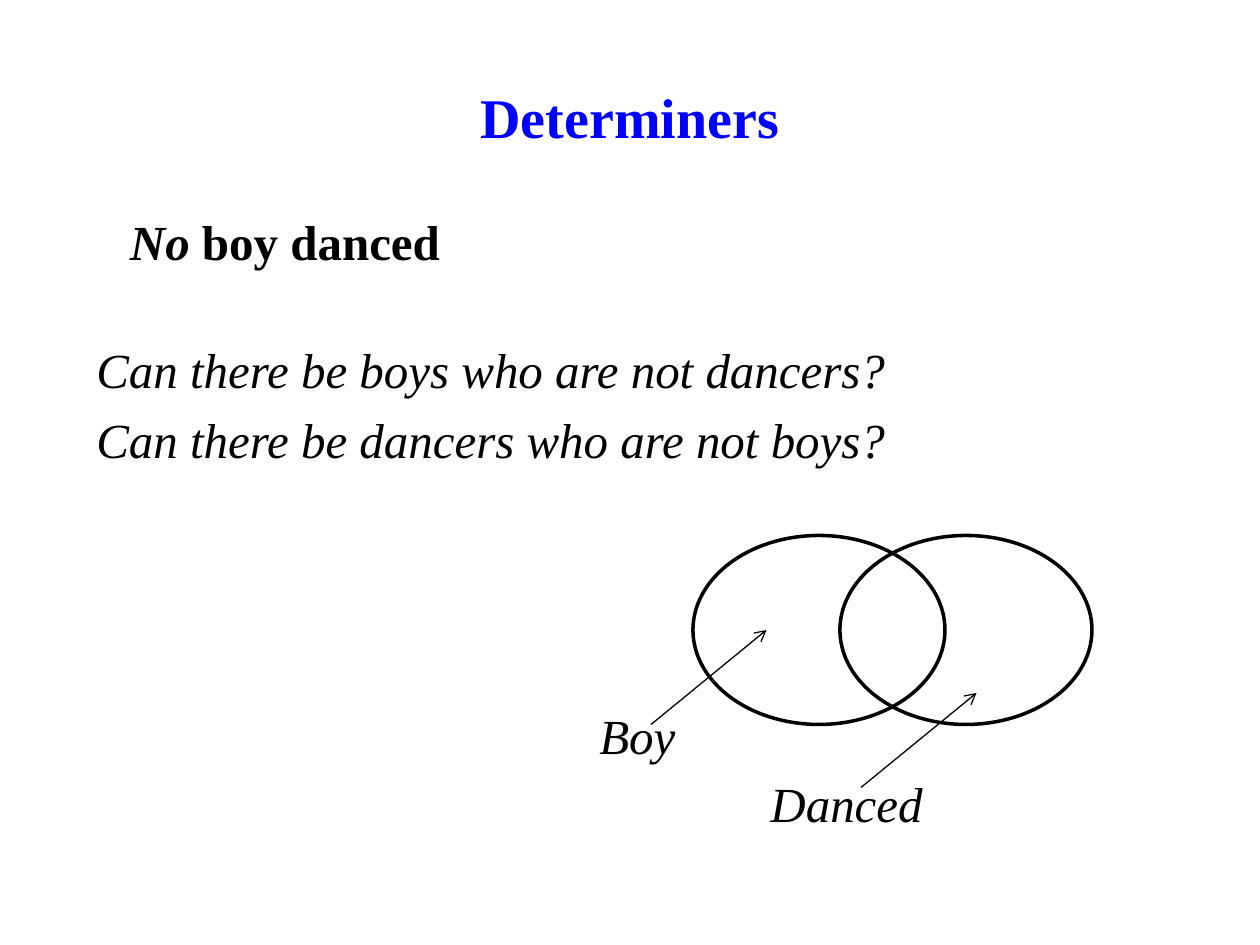
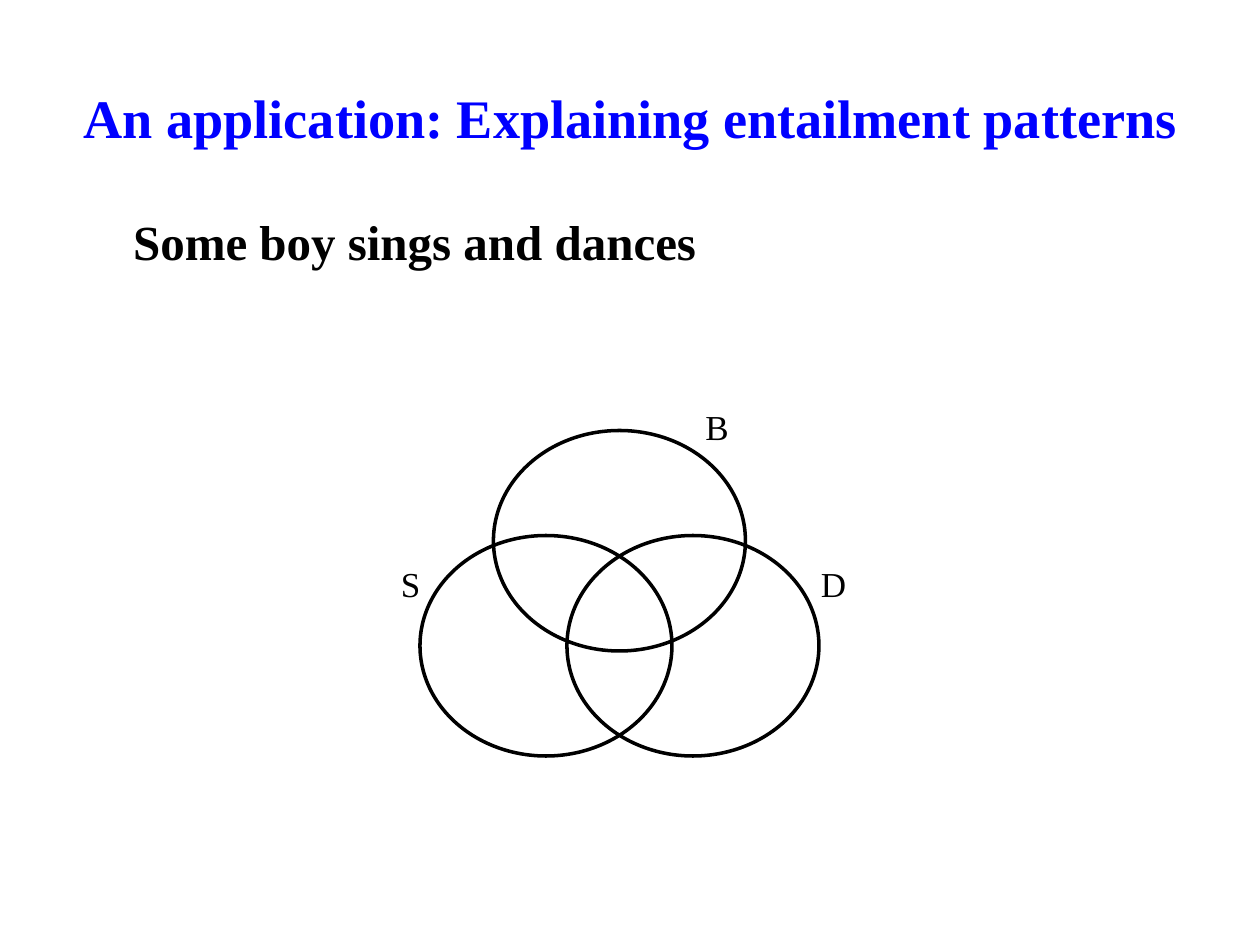
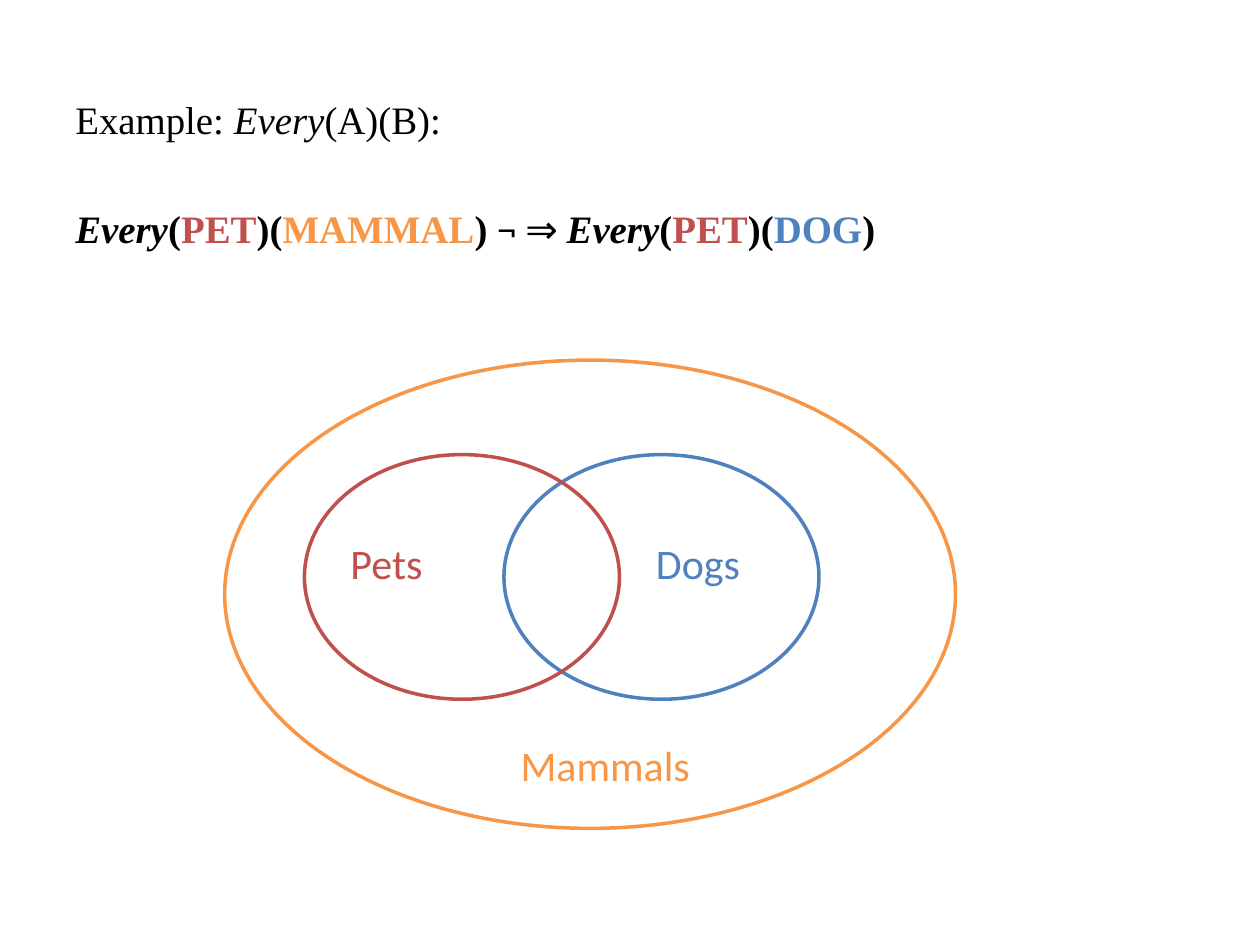
from lxml import etree
from pptx import Presentation
from pptx.dml.color import RGBColor
from pptx.enum import shapes, text
from pptx.oxml import ns
from pptx import util as u

BLACK, BLUE = "000000", "0000FF"
PET, MAMMAL, DOG = "C0504D", "F79646", "4F81BD"
SERIF, SANS = "Times New Roman", "Calibri"


def colour(value):
    return RGBColor.from_string(value)


def write(para, words, size=28, font=SERIF, ink=BLACK, bold=False, italic=False):
    span = para.add_run()
    span.text = words
    span.font.size = u.Pt(size)
    span.font.name = font
    span.font.color.rgb = colour(ink)
    span.font.bold = bold
    span.font.italic = italic


deck = Presentation()
deck.slide_width, deck.slide_height = u.Inches(10), u.Inches(7.5)
column, row = deck.slide_width / 120, deck.slide_height / 90
title_only, blank = deck.slide_layouts[5], deck.slide_layouts[6]

determiners = deck.slides.add_slide(title_only)
entailment = deck.slides.add_slide(title_only)
every = deck.slides.add_slide(blank)

titles = [
    (determiners, "Determiners", 32),
    (entailment, "An application: Explaining entailment patterns", 31),
]
for page, words, size in titles:
    title = page.shapes.title
    title.left, title.top = int(6 * column), int(3.6 * row)
    title.width, title.height = int(108 * column), int(15 * row)
    frame = title.text_frame
    frame.auto_size = text.MSO_AUTO_SIZE.NONE
    frame.vertical_anchor = text.MSO_ANCHOR.MIDDLE
    frame.paragraphs[0].alignment = text.PP_ALIGN.CENTER
    write(frame.paragraphs[0], words, size=size, ink=BLUE, bold=True)

ovals = [
    (determiners, 66, 51, 24, 18, BLACK),
    (determiners, 80, 51, 24, 18, BLACK),
    (entailment, 40, 51, 24, 21, BLACK),
    (entailment, 54, 51, 24, 21, BLACK),
    (entailment, 47, 41, 24, 21, BLACK),
    (every, 48, 43.3, 30, 23.3, DOG),
    (every, 21.4, 34.3, 69.6, 44.6, MAMMAL),
    (every, 29, 43.3, 30, 23.3, PET),
]
for page, left, top, width, height, ink in ovals:
    oval = page.shapes.add_shape(
        shapes.MSO_SHAPE.OVAL,
        int(left * column), int(top * row), int(width * column), int(height * row))
    oval.shadow.inherit = False
    oval.fill.background()
    oval.line.color.rgb = colour(ink)
    oval.line.width = u.Pt(2)

arrows = [(62, 69, 73, 60), (82, 75, 93, 66)]
for start_x, start_y, end_x, end_y in arrows:
    arrow = determiners.shapes.add_connector(
        shapes.MSO_CONNECTOR.STRAIGHT,
        int(start_x * column), int(start_y * row), int(end_x * column), int(end_y * row))
    arrow.line.color.rgb = colour(BLACK)
    arrow.line.width = u.Pt(0.75)
    etree.SubElement(arrow.line._get_or_add_ln(), ns.qn("a:tailEnd"), type="arrow")
    etree.SubElement(arrow._element.spPr, ns.qn("a:effectLst"))

strong, slanted = {"bold": True}, {"italic": True}
letter = {"size": 20}
plain = {"size": 22.2}
formula = plain | strong
quantifier = formula | slanted
name = {"size": 24, "font": SANS}

texts = [
    (determiners, 11.2, 19.6, 90, 6, 0, [
        [("No ", strong | slanted), ("boy danced", strong)]]),
    (determiners, 8, 31.7, 105, 13, 6.4, [
        [("Can there be boys who are not dancers?", slanted)],
        [("Can there be dancers who are not boys?", slanted)]]),
    (determiners, 55.9, 66.6, 12, 6, 0, [[("Boy", slanted)]]),
    (determiners, 72.2, 73.1, 20, 6, 0, [[("Danced", slanted)]]),
    (entailment, 11.5, 19.6, 90, 6, 0, [[("Some boy sings and dances", strong)]]),
    (entailment, 37, 53, 9, 5.3, 0, [[("S", letter)]]),
    (entailment, 77, 53, 9, 5.3, 0, [[("D", letter)]]),
    (entailment, 66, 38, 9, 5.3, 0, [[("B", letter)]]),
    (every, 6, 8.5, 102, 17, 36, [
        [("Example: ", plain), ("Every", plain | slanted), ("(A)(B):", plain)],
        [("Every", quantifier), ("(", formula), ("PET", formula | {"ink": PET}),
         (")(", formula), ("MAMMAL", formula | {"ink": MAMMAL}), (") ", formula),
         ("¬ ⇒ ", plain | {"font": SANS}),
         ("Every", quantifier), ("(", formula), ("PET", formula | {"ink": PET}),
         (")(", formula), ("DOG", formula | {"ink": DOG}), (")", formula)]]),
    (every, 32.2, 50.6, 13, 6, 0, [[("Pets", name | {"ink": PET})]]),
    (every, 61.3, 50.6, 13, 6, 0, [[("Dogs", name | {"ink": DOG})]]),
    (every, 48.4, 69.8, 26, 6, 0, [[("Mammals", name | {"ink": MAMMAL})]]),
]
for page, left, top, width, height, gap, lines in texts:
    box = page.shapes.add_textbox(
        int(left * column), int(top * row), int(width * column), int(height * row))
    frame = box.text_frame
    frame.word_wrap = True
    for number, line in enumerate(lines):
        para = frame.add_paragraph() if number else frame.paragraphs[0]
        para.space_before = u.Pt(gap if number else 0)
        for words, style in line:
            write(para, words, **style)

deck.save("out.pptx")
